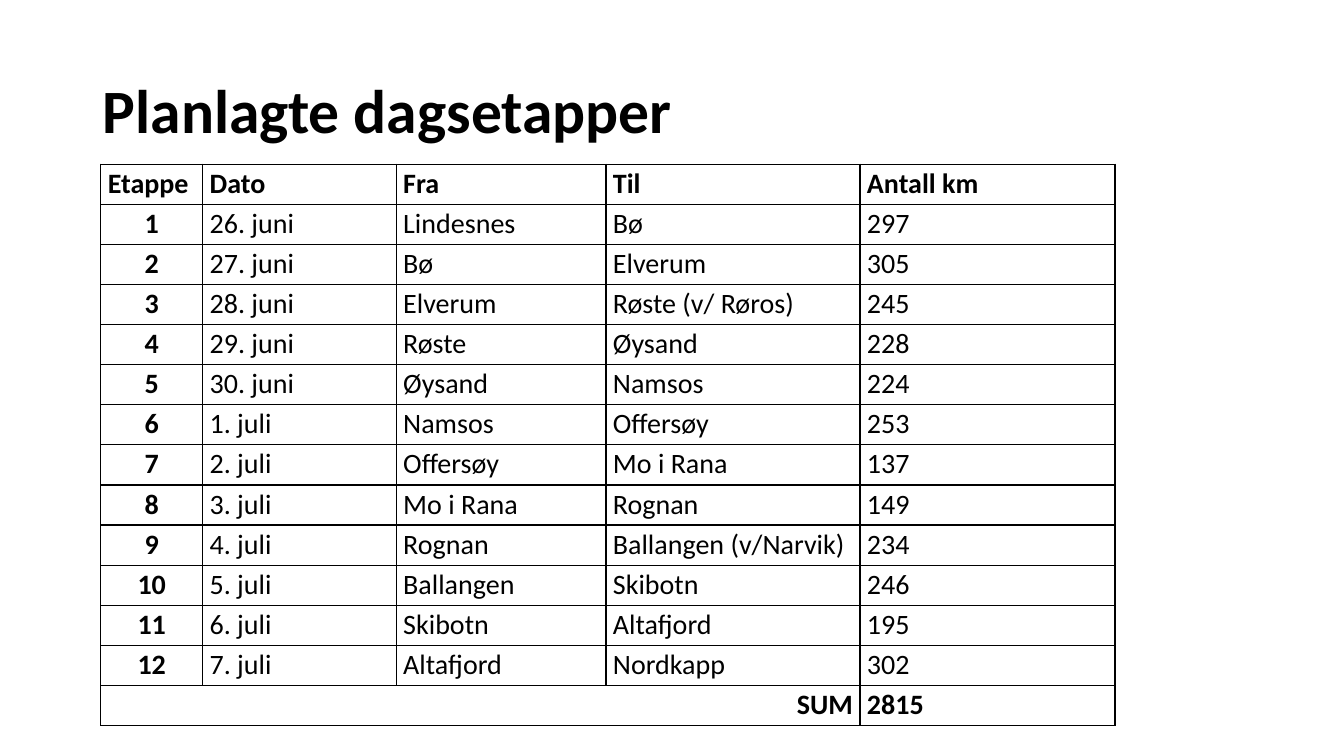
from lxml.etree import SubElement
from pptx import Presentation
from pptx.dml.color import RGBColor
from pptx.enum.text import MSO_ANCHOR, PP_ALIGN
from pptx.oxml.ns import qn
from pptx.util import Inches, Pt

BLACK = RGBColor(0x00, 0x00, 0x00)
WHITE = RGBColor(0xFF, 0xFF, 0xFF)

HEADINGS = ["Etappe", "Dato", "Fra", "Til", "Antall km"]
COLUMN_WIDTHS = [1.01, 1.92, 2.08, 2.52, 2.53]
TABLE_HEIGHT = 5.57
STAGES = [
    ("26. juni", "Lindesnes", "Bø", 297),
    ("27. juni", "Bø", "Elverum", 305),
    ("28. juni", "Elverum", "Røste (v/ Røros)", 245),
    ("29. juni", "Røste", "Øysand", 228),
    ("30. juni", "Øysand", "Namsos", 224),
    ("1. juli", "Namsos", "Offersøy", 253),
    ("2. juli", "Offersøy", "Mo i Rana", 137),
    ("3. juli", "Mo i Rana", "Rognan", 149),
    ("4. juli", "Rognan", "Ballangen (v/Narvik)", 234),
    ("5. juli", "Ballangen", "Skibotn", 246),
    ("6. juli", "Skibotn", "Altafjord", 195),
    ("7. juli", "Altafjord", "Nordkapp", 302),
]


def write_text(text_frame, text, size=20, bold=False, align=PP_ALIGN.LEFT,
               line_spacing=1.07, space_after=8, font="Calibri", color=BLACK):
    paragraph = text_frame.paragraphs[0]
    paragraph.alignment = align
    paragraph.line_spacing = line_spacing
    paragraph.space_after = Pt(space_after)
    run = paragraph.add_run()
    run.text = text
    run.font.name = font
    run.font.size = Pt(size)
    run.font.bold = bold
    run.font.color.rgb = color


class StageSlide:
    """Holds the table style and the current slide."""

    border_color = BLACK
    border_width = Pt(1)
    side_margin = Inches(0.07)

    def __init__(self, presentation):
        self.slide = presentation.slides.add_slide(presentation.slide_layouts[5])
        self.slide.background.fill.solid()
        self.slide.background.fill.fore_color.rgb = WHITE

    def title(self, text, left, top, width, height):
        shape = self.slide.shapes.title
        shape.left, shape.top = Inches(left), Inches(top)
        shape.width, shape.height = Inches(width), Inches(height)
        shape.text_frame.word_wrap = True
        shape.text_frame.vertical_anchor = MSO_ANCHOR.MIDDLE
        write_text(shape.text_frame, text, size=44, bold=True,
                   line_spacing=0.9, space_after=0)

    def table(self, row_count, left, top, widths, height):
        frame = self.slide.shapes.add_table(
            row_count, len(widths), Inches(left), Inches(top),
            Inches(sum(widths)), Inches(height))
        table = frame.table
        table.first_row = table.horz_banding = False
        for column, width in zip(table.columns, widths):
            column.width = Inches(width)
        for row in table.rows:
            row.height = Inches(height / row_count)
            for cell in row.cells:
                self.style_cell(cell)
        return table

    def style_cell(self, cell):
        cell.margin_left = cell.margin_right = self.side_margin
        cell.margin_top = cell.margin_bottom = 0
        # Borders come before the fill in the cell properties
        properties = cell._tc.get_or_add_tcPr()
        for side in ("a:lnL", "a:lnR", "a:lnT", "a:lnB"):
            line = SubElement(properties, qn(side), w=str(int(self.border_width)))
            fill = SubElement(line, qn("a:solidFill"))
            SubElement(fill, qn("a:srgbClr"), val=str(self.border_color))
        cell.fill.background()


def main():
    presentation = Presentation()
    presentation.slide_width = Inches(13.33)
    presentation.slide_height = Inches(7.5)
    stage_slide = StageSlide(presentation)

    # Title
    stage_slide.title("Planlagte dagsetapper", 0.92, 0.4, 11.5, 1.45)

    # Table with a heading row, the stages and a total row
    table = stage_slide.table(len(STAGES) + 2, 1, 1.63, COLUMN_WIDTHS, TABLE_HEIGHT)
    for column, heading in enumerate(HEADINGS):
        write_text(table.cell(0, column).text_frame, heading, bold=True)
    for number, stage in enumerate(STAGES, start=1):
        write_text(table.cell(number, 0).text_frame, str(number),
                   bold=True, align=PP_ALIGN.CENTER)
        for column, value in enumerate(stage, start=1):
            write_text(table.cell(number, column).text_frame, str(value))

    # Total distance
    total_row = len(STAGES) + 1
    total_label = table.cell(total_row, 0)
    total_label.merge(table.cell(total_row, 3))
    write_text(total_label.text_frame, "SUM", bold=True, align=PP_ALIGN.RIGHT)
    total = sum(distance for *_, distance in STAGES)
    write_text(table.cell(total_row, 4).text_frame, str(total), bold=True)

    presentation.save("out.pptx")


if __name__ == "__main__":
    main()
